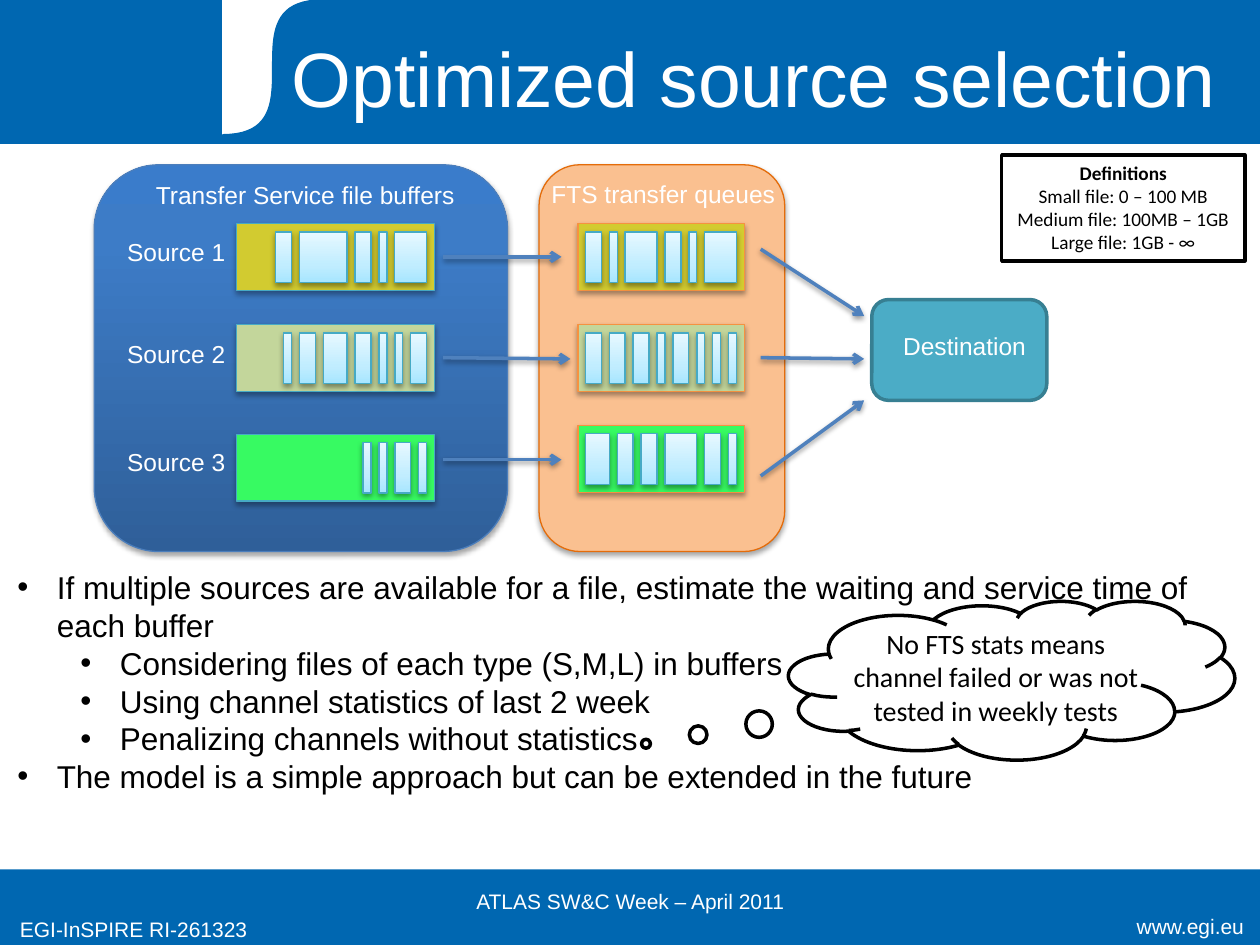
import lxml.etree
import pptx
import pptx.dml.color
import pptx.enum.shapes
import pptx.enum.text
import pptx.oxml.ns
import pptx.util

Pt = pptx.util.Pt
qn = pptx.oxml.ns.qn
SHAPE = pptx.enum.shapes.MSO_SHAPE
ALIGN = pptx.enum.text.PP_ALIGN
ANCHOR = pptx.enum.text.MSO_ANCHOR
AUTO_SIZE = pptx.enum.text.MSO_AUTO_SIZE

BRAND, WHITE, BLACK = "0067B1", "FFFFFF", "000000"
OUTLINE, ARROW = "46AAC5", "4F81BD"
FILE_GRADIENT = [(0, "A7E6FF"), (35, "C1EDFF"), (100, "E7F8FF")]
PANEL_GRADIENT = [(0, "2F5F99"), (80, "3D7CC7"), (100, "3A7CCB")]
UNIT = 4.55  # width of the smallest file, and the gap between files


def color(text):
    return pptx.dml.color.RGBColor.from_string(text)


def sub(parent, tag, **attributes):
    return lxml.etree.SubElement(parent, qn(tag), attributes)


def add_shadow(properties, opacity, distance):
    effects = properties.find(qn("a:effectLst"))
    if effects is None:
        effects = sub(properties, "a:effectLst")
    shadow = sub(effects, "a:outerShdw", blurRad=str(Pt(3.1)), dist=str(Pt(distance)),
                 dir="5400000", algn="t", rotWithShape="0")
    sub(sub(shadow, "a:srgbClr", val=BLACK), "a:alpha", val=str(opacity * 1000))


def fill_gradient(shape, stops):
    """Runs the stops (percent, colour) from the bottom to the top."""
    shape.fill.gradient()
    shape.fill.gradient_angle = 90
    stop_list = shape._element.spPr.find(qn("a:gradFill")).find(qn("a:gsLst"))
    for old in list(stop_list):
        stop_list.remove(old)
    for percent, tint in stops:
        sub(sub(stop_list, "a:gs", pos=str(percent * 1000)), "a:srgbClr", val=tint)


def paint(shape, fill, line, width=0.75, shadow=None):
    """Fill is a colour or a list of gradient stops; shadow is (opacity, distance)."""
    shape.shadow.inherit = False
    if isinstance(fill, str):
        shape.fill.solid()
        shape.fill.fore_color.rgb = color(fill)
    else:
        fill_gradient(shape, fill)
    shape.line.color.rgb = color(line)
    shape.line.width = Pt(width)
    if shadow:
        add_shadow(shape._element.spPr, *shadow)


def add_shape(page, kind, box, fill, line, width=0.75, shadow=None):
    shape = page.shapes.add_shape(kind, *map(Pt, box))
    paint(shape, fill, line, width, shadow)
    return shape


def write(frame, lines, size, font="Arial", tint=WHITE, align=ALIGN.LEFT):
    for index, line in enumerate(lines):
        para = frame.paragraphs[0] if index == 0 else frame.add_paragraph()
        para.text = line
        para.alignment = align
        para.font.size = Pt(size)
        para.font.name = font
        para.font.color.rgb = color(tint)


def add_label(page, box, text, size=14, align=ALIGN.LEFT, anchor=ANCHOR.TOP, wrap=False):
    frame = page.shapes.add_textbox(*map(Pt, box)).text_frame
    frame.word_wrap = wrap
    if not wrap:
        frame.auto_size = AUTO_SIZE.SHAPE_TO_FIT_TEXT
    frame.vertical_anchor = anchor
    write(frame, [text], size, align=align)


def add_arrow(page, start, end):
    arrow = page.shapes.add_connector(pptx.enum.shapes.MSO_CONNECTOR.STRAIGHT,
                                      *map(Pt, start + end))
    arrow.line.color.rgb = color(ARROW)
    arrow.line.width = Pt(2)
    sub(arrow.line._get_or_add_ln(), "a:tailEnd", type="arrow")
    add_shadow(arrow._element.spPr, 38, 1.6)


def add_header(page, box):
    left, top, width, height = box
    add_shape(page, SHAPE.RECTANGLE, box, BRAND, BRAND)
    notch, right, bottom = left + 127.4, left + 269.3, top + 77
    add_shape(page, SHAPE.RECTANGLE, (notch, top, right - notch, bottom - top), WHITE, WHITE)
    # S-shaped edge: a cubic curve from the foot of the notch to the top
    curve_end, steps = left + 184.3, 40
    points = []
    for step in range(steps + 1):
        t = step / steps
        s = 1 - t
        x = notch * (s**3 + 3 * s * t**2) + curve_end * (3 * s**2 * t + t**3)
        y = top + (bottom - top) * (s**3 + 3 * s**2 * t)
        points.append((Pt(x), Pt(y)))
    outline = page.shapes.build_freeform(Pt(right), Pt(top))
    outline.add_line_segments([(Pt(right), Pt(bottom))] + points)
    paint(outline.convert_to_shape(), BRAND, BRAND)
    add_label(page, (left + 156.2, top + 9.4, 550, 68.4), "Optimized source selection",
              44, ALIGN.CENTER, ANCHOR.MIDDLE, True)


def add_footer(page, box):
    left, top, width, height = box
    bar = add_shape(page, SHAPE.RECTANGLE, box, BRAND, BRAND)
    bar.line.fill.background()
    add_label(page, (left + 604, top + 21.6, 114, 22), "www.egi.eu", 12, ALIGN.RIGHT, wrap=True)
    add_label(page, (left + 4.3, top + 23.2, 180, 22), "EGI-InSPIRE RI-261323", 12, wrap=True)
    add_label(page, (left + 246.2, top + 3.6, 228, 28.8), "ATLAS SW&C Week – April 2011",
              12, ALIGN.CENTER, ANCHOR.MIDDLE, True)


def add_queue(page, box, fill, line, files):
    """Files are widths in units, packed against the right end of the queue."""
    left, top, width, height = box
    add_shape(page, SHAPE.RECTANGLE, box, fill, line, shadow=(35, 1.8))
    x = left + width - UNIT * (sum(files) + len(files))
    for size in files:
        add_shape(page, SHAPE.RECTANGLE, (x, top + 4.6, size * UNIT, 29),
                  FILE_GRADIENT, OUTLINE, shadow=(38, 1.6))
        x += (size + 1) * UNIT


def add_panel(page, box, fill, line, title, title_box, queues):
    """Title box and queues are relative to the panel's corner.

    Queues are (left, top, width, fill, line, files).
    """
    add_shape(page, SHAPE.ROUNDED_RECTANGLE, box, fill, line, shadow=(35, 1.8))
    for left, top, width, *look in queues:
        add_queue(page, (box[0] + left, box[1] + top, width, 38.2), *look)
    left, top, width, height = title_box
    add_label(page, (box[0] + left, box[1] + top, width, height), title)


def add_diagram(page, left, top):
    colors = ["D2CB30", "C3D69B", "37FA62"]
    source_files = [[2, 6, 2, 1, 4], [1, 2, 3, 2, 1, 1, 2], [1, 1, 2, 1]]
    queue_files = [[2, 1, 4, 2, 1, 4], [2, 2, 2, 1, 2, 1, 1, 1], [3, 2, 2, 4, 2, 1]]
    source_tops, queue_tops = [33.7, 91.4, 154], [33.7, 91.4, 149]
    add_panel(page, (left, top, 236.2, 221), PANEL_GRADIENT, "4B7EBC",
              "Transfer Service file buffers", (28.2, 5, 194, 24.2),
              [(81.4, y, 113.2, fill, OUTLINE, files)
               for y, fill, files in zip(source_tops, colors, source_files)])
    add_panel(page, (left + 254.2, top, 140.4, 221), "FAC090", "E46C0A",
              "FTS transfer queues", (0, 4.3, 143.5, 24.2),
              [(22.3, y, 95.2, fill, "F69240", files)
               for y, fill, files in zip(queue_tops, colors, queue_files)])
    for number, y in enumerate([37.6, 95.9, 157.9], 1):
        add_label(page, (left + 11.7, top + y, 71.3, 24.2), f"Source {number}")
    add_shape(page, SHAPE.ROUNDED_RECTANGLE, (left + 444.4, top + 77, 100, 57.6),
              "4BACC6", "377F92", 2)
    add_label(page, (left + 455.2, top + 91.5, 85, 24.2), "Destination")
    for x1, y1, x2, y2 in [(199.5, 52.6, 267.1, 52.6), (199.5, 110.2, 272.2, 110.9),
                           (199.5, 168.5, 267.1, 168.5), (380.9, 48.2, 440, 86.4),
                           (380.9, 110.2, 440, 110.9), (380.9, 177.8, 440, 134.6)]:
        add_arrow(page, (left + x1, top + y1), (left + x2, top + y2))


def add_definitions(page, box):
    frame = add_shape(page, SHAPE.RECTANGLE, box, WHITE, BLACK, 2).text_frame
    frame.word_wrap = True
    frame.vertical_anchor = ANCHOR.TOP
    write(frame, ["Definitions", "Small file: 0 – 100 MB", "Medium file: 100MB – 1GB",
                  "Large file: 1GB - ∞"], 11, "Calibri", BLACK, ALIGN.CENTER)
    frame.paragraphs[0].font.bold = True


def add_bullets(page, box):
    items = [
        (0, "If multiple sources are available for a file, estimate the waiting and "
            "service time of each buffer"),
        (1, "Considering files of each type (S,M,L) in buffers"),
        (1, "Using channel statistics of last 2 week"),
        (1, "Penalizing channels without statistics"),
        (0, "The model is a simple approach but can be extended in the future"),
    ]
    frame = page.shapes.add_textbox(*map(Pt, box)).text_frame
    frame.word_wrap = True
    for index, (level, text) in enumerate(items):
        para = frame.paragraphs[0] if index == 0 else frame.add_paragraph()
        para.text = text
        para.level = level
        properties = para._p.get_or_add_pPr()
        properties.set("marL", str(Pt(22.5 + 36 * level)))
        properties.set("indent", str(Pt(-22.5)))
        sub(properties, "a:buFont", typeface="Arial")
        sub(properties, "a:buChar", char="•")
        para.font.size = Pt(18)
        para.font.name = "Arial"
        para.font.color.rgb = color(BLACK)


def add_cloud(page, box):
    cloud = add_shape(page, SHAPE.CLOUD_CALLOUT, box, WHITE, BLACK, 2)
    cloud.adjustments[0], cloud.adjustments[1] = -0.82, 0.4
    frame = cloud.text_frame
    frame.word_wrap = True
    frame.vertical_anchor = ANCHOR.MIDDLE
    frame.margin_left = frame.margin_right = 0
    write(frame, ["No FTS stats means channel failed or was not tested in weekly tests"],
          16, "Calibri", BLACK, ALIGN.CENTER)


def main():
    deck = pptx.Presentation()
    deck.slide_width, deck.slide_height = Pt(720), Pt(540)
    page = deck.slides.add_slide(deck.slide_layouts[6])
    add_footer(page, (0, 496.8, 720, 43.2))
    add_header(page, (0, 0, 720, 82.1))
    add_diagram(page, 53.8, 94.2)
    add_definitions(page, (572.4, 88.6, 139, 60.5))
    add_bullets(page, (2.9, 321.1, 692, 138.2))
    add_cloud(page, (450.7, 343.4, 254.9, 90.7))
    deck.save("out.pptx")


if __name__ == "__main__":
    main()
